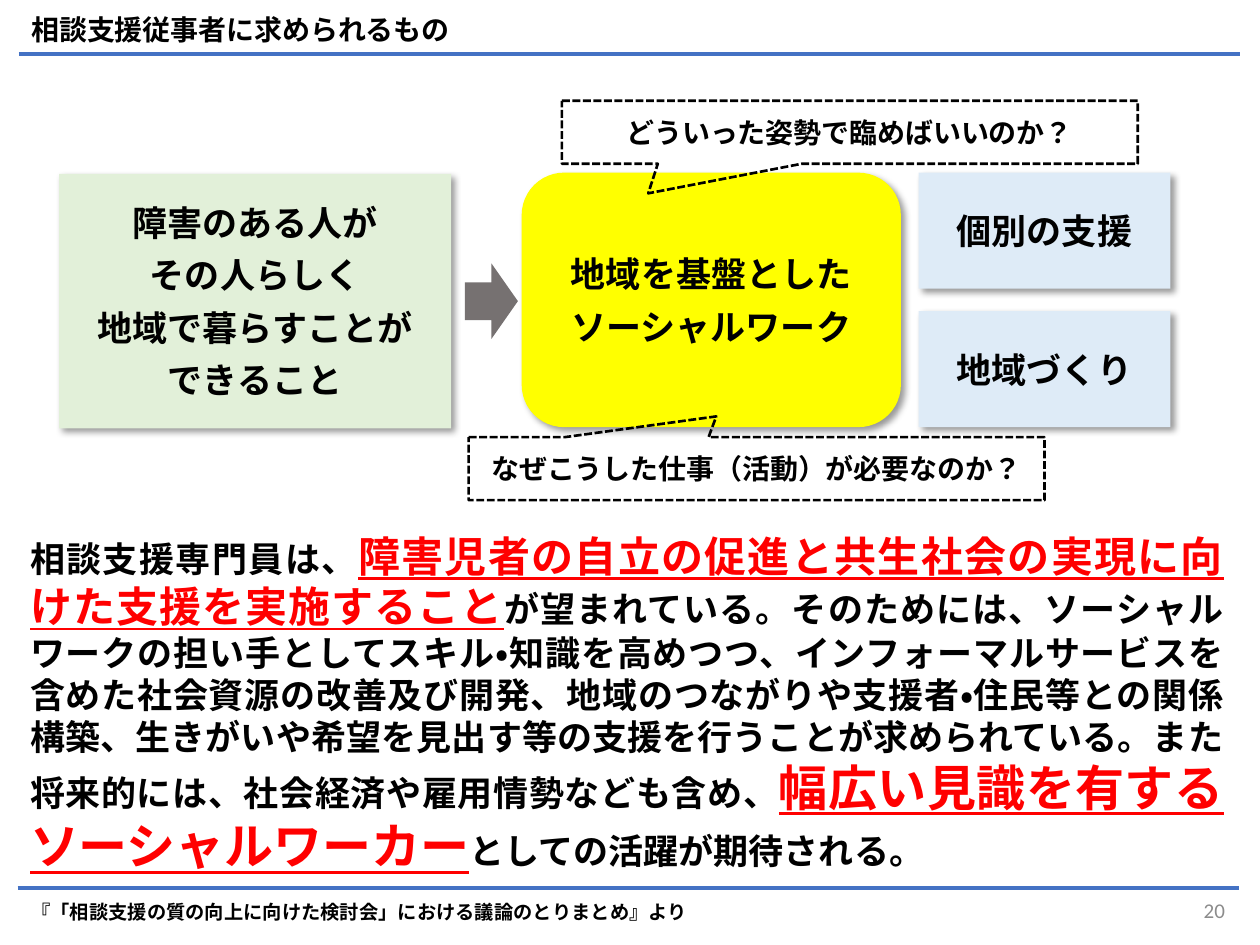
from lxml import etree
from pptx import Presentation
from pptx.dml.color import RGBColor
from pptx.enum.dml import MSO_LINE
from pptx.enum.lang import MSO_LANGUAGE_ID
from pptx.enum.shapes import MSO_CONNECTOR, MSO_SHAPE
from pptx.enum.text import MSO_ANCHOR, PP_ALIGN
from pptx.oxml import parse_xml
from pptx.oxml.ns import qn
from pptx.util import Inches, Pt

RECT, ROUND = MSO_SHAPE.RECTANGLE, MSO_SHAPE.ROUNDED_RECTANGLE
ARROW, CALLOUT = MSO_SHAPE.DOWN_ARROW, MSO_SHAPE.RECTANGULAR_CALLOUT
STRAIGHT, DASH = MSO_CONNECTOR.STRAIGHT, MSO_LINE.SQUARE_DOT
MIDDLE, BOTTOM = MSO_ANCHOR.MIDDLE, MSO_ANCHOR.BOTTOM
LEFT, RIGHT = PP_ALIGN.LEFT, PP_ALIGN.RIGHT
CENTER, JUSTIFY = PP_ALIGN.CENTER, PP_ALIGN.JUSTIFY
JAPANESE = MSO_LANGUAGE_ID.JAPANESE

COLORS = {
    "ink": "000000", "rule": "4472C4", "page": "8C8C8C", "arrow": "767171",
    "goal": "E2F0D9", "core": "FFFF00", "field": "DEEBF7", "key": "FF0000",
}
SHADOW = (
    '<a:effectLst xmlns:a="http://schemas.openxmlformats.org/drawingml/2006/main">'
    '<a:outerShdw blurRad="50800" dist="38100" dir="2700000" algn="tl" rotWithShape="0">'
    '<a:srgbClr val="000000"><a:alpha val="40000"/></a:srgbClr>'
    '</a:outerShdw></a:effectLst>'
)


class Board:
    """Holds the style and the slide being drawn."""

    def __init__(self, slide):
        self.shapes = slide.shapes

    def color(self, name):
        return RGBColor.from_string(COLORS[name])

    def style(self, run, size, font, color="ink", bold=True, under=False):
        run.font.size = Pt(size)
        run.font.name = font
        run.font.bold = bold
        run.font.underline = under
        run.font.color.rgb = self.color(color)
        run.font.language_id = JAPANESE

    def fill_text(self, shape, lines, size, font, align=CENTER, anchor=MIDDLE,
                  before=0, space=None, inset=(0.1, 0.05), color="ink", bold=True):
        frame = shape.text_frame
        frame.word_wrap = True
        frame.vertical_anchor = anchor
        frame.margin_left = frame.margin_right = Inches(inset[0])
        frame.margin_top = frame.margin_bottom = Inches(inset[1])
        frame.text = "\n".join(lines)
        for para in frame.paragraphs:
            para.alignment = align
            para.space_before = Pt(before)
            para.line_spacing = space
            for run in para.runs:
                self.style(run, size, font, color, bold)

    def rule(self, left, top, width):
        line = self.shapes.add_connector(
            STRAIGHT, Inches(left), Inches(top), Inches(left + width), Inches(top))
        line.line.color.rgb = self.color("rule")
        line.line.width = Pt(2.5)
        etree.SubElement(line._element.spPr, qn("a:effectLst"))

    def label(self, box, lines, size, font, **look):
        text = self.shapes.add_textbox(*map(Inches, box))
        self.fill_text(text, lines, size, font, **look)

    def prose(self, box, parts):
        text = self.shapes.add_textbox(*map(Inches, box))
        frame = text.text_frame
        frame.word_wrap = True
        frame.vertical_anchor = MIDDLE
        para = frame.paragraphs[0]
        para.alignment = JUSTIFY
        para.space_before = Pt(6)
        for words, size, key in parts:
            run = para.add_run()
            run.text = words
            self.style(run, size, "Arial", "key" if key else "ink", under=key)

    def shape(self, kind, box, fill):
        shape = self.shapes.add_shape(kind, *map(Inches, box))
        shape.shadow.inherit = False
        shape.line.fill.background()
        shape.fill.solid()
        shape.fill.fore_color.rgb = self.color(fill)
        return shape

    def card(self, kind, box, fill, lines, font="Arial", inset=(0.1, 0.1)):
        card = self.shape(kind, box, fill)
        props = card._element.spPr
        props.replace(props.find(qn("a:effectLst")), parse_xml(SHADOW))
        self.fill_text(card, lines, 20, font, before=6, inset=inset)

    def callout(self, left, top, tip, words):
        box = self.shapes.add_shape(
            CALLOUT, Inches(left), Inches(top), Inches(4.57), Inches(0.5))
        box.shadow.inherit = False
        box.fill.background()
        box.line.color.rgb = self.color("ink")
        box.line.width = Pt(1.5)
        box.line.dash_style = DASH
        box.adjustments[0], box.adjustments[1] = tip
        self.fill_text(box, [words], 16, "Calibri")


def main():
    deck = Presentation()
    deck.slide_width, deck.slide_height = Inches(10), Inches(7.5)
    board = Board(deck.slides.add_slide(deck.slide_layouts[6]))

    board.rule(0.15, 0.43, 9.69)
    board.label((8.94, 7.1, 0.88, 0.25), ["20"], 12, "Calibri",
                align=RIGHT, color="page", bold=False)
    board.rule(0.14, 7.05, 9.69)
    board.shape(ARROW, (3.6, 2.18, 0.6, 0.42), "arrow").rotation = 270

    board.prose((0.14, 4.14, 9.67, 2.87), [
        ("相談支援専門員は、", 20, False),
        ("障害児者の自立の促進と共生社会の実現に向けた支援を実施すること", 24, True),
        ("が望まれている。そのためには、ソーシャルワークの担い手としてスキル・知識を"
         "高めつつ、インフォーマルサービスを含めた社会資源の改善及び開発、地域の"
         "つながりや支援者・住民等との関係構築、生きがいや希望を見出す等の支援を"
         "行うことが求められている。また将来的には、社会経済や雇用情勢なども含め、",
         20, False),
        ("幅広い見識を有するソーシャルワーカー", 28, True),
        ("としての活躍が期待される。", 20, False),
    ])
    board.label((0.15, 7.07, 8.88, 0.31),
                ["『「相談支援の質の向上に向けた検討会」における議論のとりまとめ』より"],
                11, "Calibri", align=LEFT, anchor=BOTTOM, space=0.9)

    board.card(RECT, (0.47, 1.38, 3.11, 2.02), "goal",
               ["障害のある人が", "その人らしく", "地域で暮らすことが", "できること"])
    board.card(ROUND, (4.14, 1.37, 3.01, 2.02), "core",
               ["地域を基盤とした", "ソーシャルワーク"], "Calibri", (0.04, 0.05))
    for row, words in enumerate(["個別の支援", "地域づくり"]):
        board.card(RECT, (7.29, 1.37 + 1.1 * row, 2, 0.92), "field", [words])

    board.callout(4.46, 0.8, (-0.35, 0.97), "どういった姿勢で臨めばいいのか？")
    board.callout(3.72, 3.47, (-0.07, -0.83), "なぜこうした仕事（活動）が必要なのか？")
    board.label((0.15, 0.08, 9.67, 0.34), ["相談支援従事者に求められるもの"],
                16, "Arial", align=JUSTIFY, space=0.9)

    deck.save("out.pptx")


if __name__ == "__main__":
    main()
